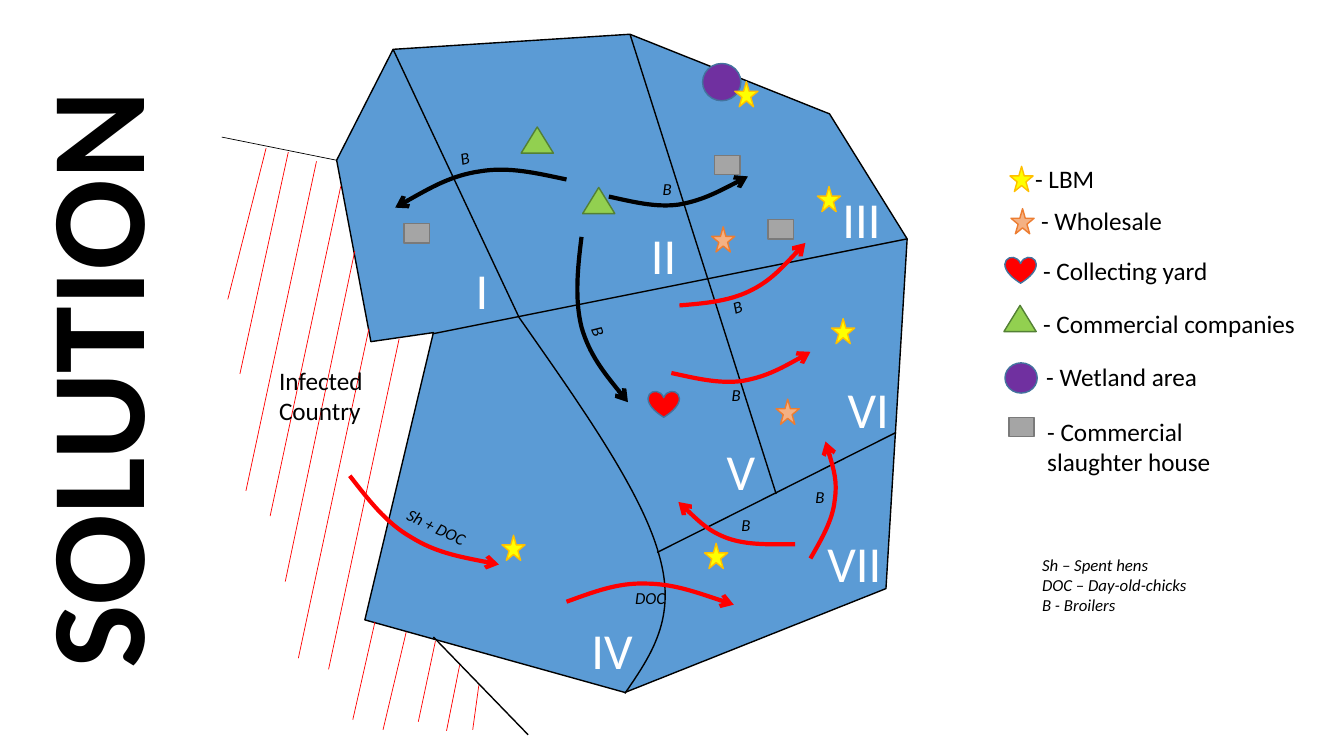
from math import cos, radians, sin

from pptx import Presentation
from pptx.dml.color import RGBColor
from pptx.enum.shapes import MSO_CONNECTOR as LINK, MSO_SHAPE as SHAPE
from pptx.enum.text import MSO_ANCHOR as ANCHOR, MSO_AUTO_SIZE as FIT, PP_ALIGN as ALIGN
from pptx.oxml.ns import qn
from pptx.util import Pt
from lxml import etree

PX = 9144  # 100 px to the inch
WIDE, HIGH = 4000 / 3, 750

HEX = {
    "black": "000000", "white": "FFFFFF", "red": "FF0000", "land": "5B9BD5",
    "yellow": "FFFF00", "gold": "FFC000", "peach": "F4B183", "orange": "ED7D31",
    "green": "92D050", "moss": "538035", "violet": "7030A0", "navy": "43739E",
    "grey": "A5A5A5", "slate": "7A7A7A",
}

TITLE = ("SOLUTION", (-234, 291, 650, 172), dict(size=96, bold=True, align="c", turn=270))

LAND = [(390, 49), (334, 159), (368, 339), (430, 330), (362, 615),
        (620, 687), (879, 584), (900, 237), (823, 113), (625, 34)]
SOUTH = [(889, 429), (652, 548)]
BORDERS = [(900, 237, 430, 331), (625, 34, 770, 490), (390, 49, 515, 315), (430, 632, 524, 729)]
COAST = (334, 159, 220, 136)
HATCH = [
    (264, 147, 226, 297), (286, 151, 238, 371), (314, 160, 244, 487),
    (338, 185, 268, 512), (352, 249, 283, 577), (366, 326, 296, 653),
    (396, 336, 326, 664), (372, 617, 350, 714), (403, 627, 380, 724),
    (432, 636, 415, 716), (456, 660, 443, 725), (475, 680, 469, 724),
]

# frame, turn, then start point and two cubic sections as seen on the slide
RIVER = ((515, 315, 146, 373), 0,
         [(620, 688), (646, 650), (672, 613), (654, 551), (637, 488), (576, 402), (515, 315)])
ROUTES = [
    ("red", (347, 472, 148, 88), 0,
     [(347, 472), (365, 495), (383, 519), (408, 533), (432, 548), (464, 554), (495, 560)]),
    ("black", (403, 148, 148, 88), 140.1,
     [(562, 178), (533, 172), (505, 165), (476, 170), (448, 174), (420, 190), (392, 206)]),
    ("red", (571, 560, 148, 76), 28.2,
     [(562, 597), (587, 588), (612, 578), (640, 579), (667, 579), (698, 590), (728, 600)]),
    ("black", (531, 267, 137, 101), 37.9,
     [(577, 235), (573, 266), (570, 297), (577, 325), (585, 352), (604, 376), (623, 399)]),
    ("red", (683, 479, 95, 79), 239.6,
     [(789, 540), (765, 540), (742, 541), (722, 534), (703, 527), (688, 512), (673, 498)]),
    ("black", (613, 148, 119, 73), 140.1,
     [(604, 195), (627, 200), (650, 206), (673, 203), (696, 199), (719, 187), (742, 175)]),
    ("red", (766, 460, 92, 72), 239.6,
     [(804, 554), (815, 535), (826, 516), (828, 497), (831, 477), (825, 458), (819, 438)]),
    ("red", (676, 323, 119, 73), 140.1,
     [(666, 370), (689, 375), (713, 381), (736, 378), (759, 374), (782, 362), (804, 349)]),
    ("red", (677, 235, 119, 73), 121.9,
     [(674, 303), (698, 301), (722, 299), (743, 289), (764, 279), (781, 260), (799, 241)]),
]

# text, left, top, width, turn
LOADS = [
    ("Sh + DOC", 372, 508, 122, 25.8), ("B", 400, 142, 122, 346.7),
    ("DOC", 584, 578, 122, 0), ("B", 533, 314, 122, 68.8),
    ("B", 601, 172, 122, 0), ("B", 679, 506, 122, 0),
    ("B", 782, 478, 63, 0), ("B", 699, 377, 63, 0), ("B", 700, 289, 63, 341.8),
]
ZONES = [
    ("I", 462, 252), ("II", 636, 217), ("III", 826, 182), ("IV", 577, 609),
    ("V", 711, 432), ("VII", 811, 523), ("VI", 831, 370),
]

# preset, fill, line, width, height
KINDS = {
    "market": (SHAPE.STAR_5_POINT, "yellow", "gold", 23, 25),
    "trade": (SHAPE.STAR_5_POINT, "peach", "orange", 23, 25),
    "yard": (SHAPE.HEART, "red", "navy", 31, 26),
    "firm": (SHAPE.ISOSCELES_TRIANGLE, "green", "moss", 32, 26),
    "marsh": (SHAPE.OVAL, "violet", "navy", 38, 37),
    "pond": (SHAPE.OVAL, "violet", "navy", 32, 30),
    "plant": (SHAPE.RECTANGLE, "grey", "slate", 25, 19),
}
SITES = {
    "marsh": [(697, 63)],
    "market": [(811, 185), (825, 316), (699, 539), (498, 531), (729, 81)],
    "trade": [(770, 396), (706, 225)],
    "firm": [(578, 186), (517, 126)],
    "yard": [(643, 388)],
    "plant": [(709, 154), (762, 218), (401, 222)],
}

# kind, icon place, text, text box
LEGEND = [
    ("market", (1002, 165), "- LBM", (1017, 157, 192, 40)),
    ("trade", (1003, 207), "- Wholesale", (1023, 199, 192, 40)),
    ("yard", (997, 255), "- Collecting yard", (1025, 248, 192, 40)),
    ("firm", (996, 303), "- Commercial companies", (1025, 301, 317, 40)),
    ("pond", (997, 360), "- Wetland area", (1028, 354, 192, 40)),
    ("plant", (1001, 414), "- Commercial slaughter house", (1029, 408, 192, 71)),
]
NOTES = ("Sh – Spent hens\nDOC – Day-old-chicks\nB - Broilers", (1024, 545, 178, 91))
ABROAD = ("Infected Country", (267, 357, 152, 71))


def emu(vals):
    return [round(v * PX) for v in vals]


def tint(name):
    return RGBColor.from_string(HEX[name])


def stroke(line, hue, wide):
    line.color.rgb = tint(hue)
    line.width = Pt(wide)


def place(item, box, turn):
    item.left, item.top, item.width, item.height = emu(box)
    item.rotation = turn


def link(ends, hue="black", wide=1):
    item = deck.add_connector(LINK.STRAIGHT, *emu(ends))
    stroke(item.line, hue, wide)
    etree.SubElement(item._element.spPr, qn("a:effectLst"))


def outline(points, fill=None, hue="black", wide=1):
    first, *rest = [emu(p) for p in points]
    pen = deck.build_freeform(*first, scale=1.0)
    pen.add_line_segments(rest, close=fill is not None)
    item = pen.convert_to_shape()
    item.shadow.inherit = False
    if fill:
        item.fill.solid()
        item.fill.fore_color.rgb = tint(fill)
    else:
        item.fill.background()
    stroke(item.line, hue, wide)
    return item


def unturn(point, box, turn):
    """Point in the frame's own axes, before the frame is turned."""
    x, y, w, h = box
    dx, dy = point[0] - x - w / 2, point[1] - y - h / 2
    c, s = cos(radians(turn)), sin(radians(turn))
    return emu((dx * c + dy * s + w / 2, dy * c - dx * s + h / 2))


def curve(box, turn, knots, hue="black", wide=1, arrow=False):
    item = outline(knots[::3], hue=hue, wide=wide)
    place(item, box, turn)
    spots = [unturn(p, box, turn) for p in knots]
    track = next(item._element.iter(qn("a:path")))
    for child in list(track):
        track.remove(child)
    for key, val in zip("wh", emu(box[2:])):
        track.set(key, str(val))
    for tag, group in (("moveTo", spots[:1]), ("cubicBezTo", spots[1:4]),
                       ("cubicBezTo", spots[4:])):
        step = etree.SubElement(track, qn("a:" + tag))
        for x, y in group:
            etree.SubElement(step, qn("a:pt"), x=str(x), y=str(y))
    if arrow:
        etree.SubElement(item._element.spPr.find(qn("a:ln")), qn("a:tailEnd"), type="arrow")


def icon(kind, spot):
    form, fill, edge, w, h = KINDS[kind]
    item = deck.add_shape(form, *emu((*spot, w, h)))
    item.shadow.inherit = False
    item.fill.solid()
    item.fill.fore_color.rgb = tint(fill)
    stroke(item.line, edge, 1)


def write(text, box, size=18, hue="black", align="l", turn=0, item=None,
          fit=FIT.SHAPE_TO_FIT_TEXT, **style):
    item = item or deck.add_textbox(*emu(box))
    place(item, box, turn)
    frame = item.text_frame
    frame.text = text
    for key, val in dict(word_wrap=True, auto_size=fit, vertical_anchor=ANCHOR.TOP).items():
        setattr(frame, key, val)
    for para in frame.paragraphs:
        para.alignment = ALIGN.CENTER if align == "c" else ALIGN.LEFT
        font = para.runs[0].font
        font.color.rgb = tint(hue)
        for key, val in dict(name="Calibri", size=Pt(size), **style).items():
            setattr(font, key, val)


show = Presentation()
show.slide_width, show.slide_height = emu((WIDE, HIGH))
slide = show.slides.add_slide(show.slide_layouts[5])
deck = slide.shapes

text, box, style = TITLE
write(text, box, item=deck.title, **style)

outline(LAND, "land")
outline(SOUTH)
for ends in BORDERS:
    link(ends)
curve(*RIVER)
for hue, *route in ROUTES:
    curve(*route, hue=hue, wide=3, arrow=True)
for ends in HATCH:
    link(ends, "red", 0.5)
link(COAST, wide=0.5)

for text, x, y, w, turn in LOADS:
    write(text, (x, y, w, 30), size=12, align="c", turn=turn, italic=True)
for text, x, y in ZONES:
    write(text, (x, y, 52 if text == "I" else 134, 71), size=36, hue="white")
write(*ABROAD)

for kind, spots in SITES.items():
    for spot in spots:
        icon(kind, spot)
for kind, spot, text, box in LEGEND:
    icon(kind, spot)
    write(text, box)
write(*NOTES, size=12, italic=True, fit=FIT.NONE)

show.save("out.pptx")
